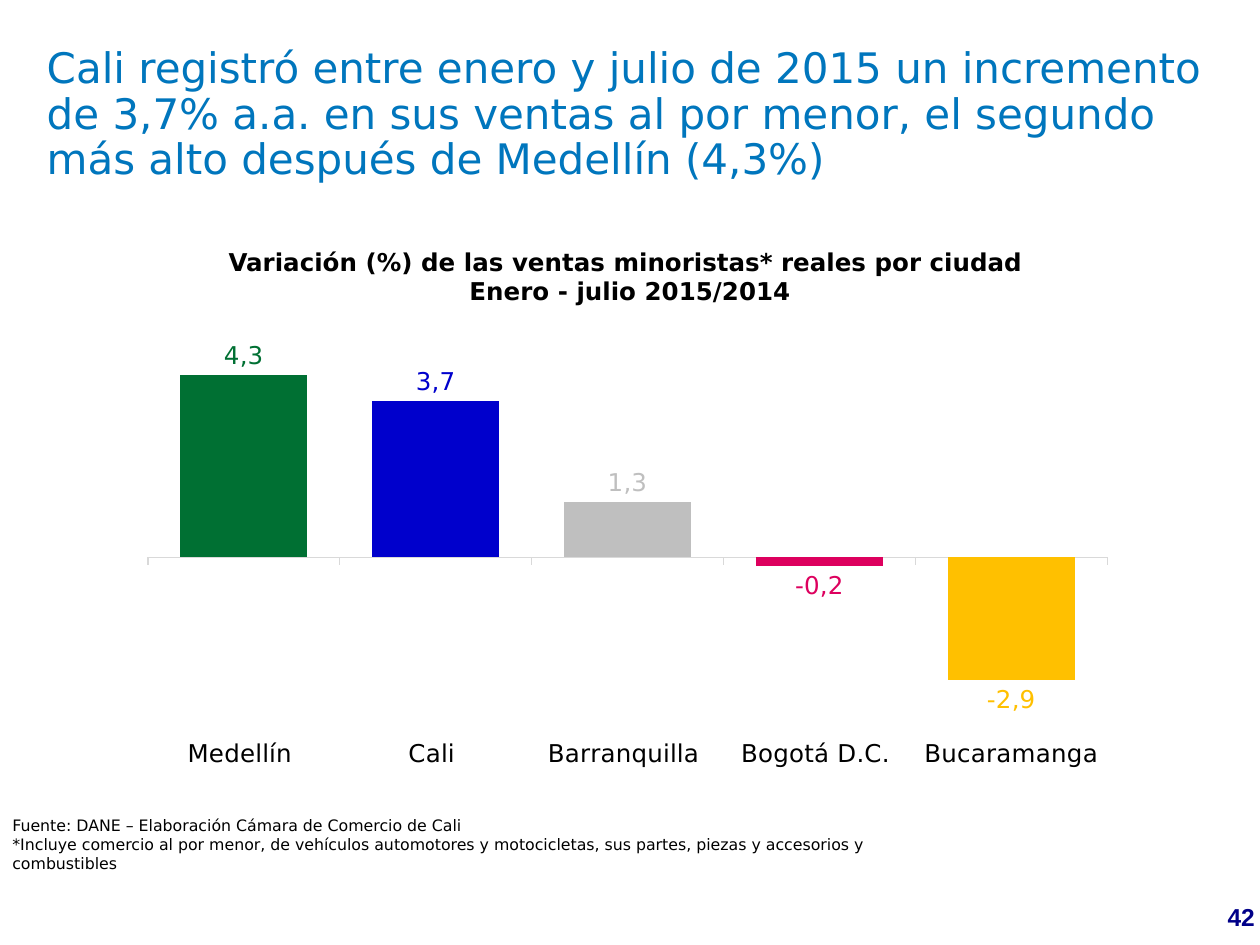
import pptx
import pptx.util
import pptx.oxml
import pptx.chart.data
import pptx.dml.color
import pptx.enum.chart
import pptx.enum.text

Pt = pptx.util.Pt
Align = pptx.enum.text.PP_ALIGN
Anchor = pptx.enum.text.MSO_ANCHOR
Chart = pptx.enum.chart

TITLE = ("Cali registró entre enero y julio de 2015 un incremento de 3,7% a.a. "
         "en sus ventas al por menor, el segundo más alto después de Medellín (4,3%)")
HEAD = ["Variación (%) de las ventas minoristas* reales por ciudad ",
        "Enero - julio 2015/2014"]
NOTES = ["Fuente: DANE – Elaboración Cámara de Comercio de Cali",
         "*Incluye comercio al por menor, de vehículos automotores y motocicletas, "
         "sus partes, piezas y accesorios y combustibles"]
PAGE = "42"
SERIES = "Series 1"
CITIES = [  # name, change in %, colour
    ("Medellín ", 4.3, "007033"),
    ("Cali ", 3.7, "0000CC"),
    ("Barranquilla ", 1.3, "BFBFBF"),
    ("Bogotá D.C. ", -0.2, "DD005E"),
    ("Bucaramanga", -2.9, "FFC000"),
]
THEME = {
    "font": "DejaVu Sans", "num_font": "Arial", "base_font": "Calibri",
    "title": "0076BD", "text": "000000", "page": "000089", "axis": "D9D9D9",
    "title_size": 24, "base_size": 18, "size": 14, "note_size": 9,
}
BOXES = {  # left, top, width, height
    "title": (19.5, 26.5, 686, 79),
    "head": (94.5, 137.5, 531, 41),
    "chart": (76.5, 174.5, 570.5, 273),
    "notes": (0, 462.5, 560, 40),
    "page": (687, 512, 44.5, 24.5),
}
PLOT = {"x": 0.014, "y": 0.084, "w": 0.961, "h": 0.798}


def place(key):
    return [Pt(n) for n in BOXES[key]]


def rgb(code):
    return pptx.dml.color.RGBColor.from_string(code)


def style(font, size=THEME["size"], color=THEME["text"], face=THEME["font"],
          bold=False):
    font.size, font.name, font.bold = Pt(size), face, bold
    font.color.rgb = rgb(color)


def write(frame, lines, align=Align.LEFT, anchor=Anchor.TOP, space=None, **look):
    frame.word_wrap = True
    frame.auto_size = pptx.enum.text.MSO_AUTO_SIZE.NONE
    frame.vertical_anchor = anchor
    for i, line in enumerate(lines):
        para = frame.add_paragraph() if i else frame.paragraphs[0]
        para.alignment = align
        para.line_spacing = space
        run = para.add_run()
        run.text = line
        style(run.font, **look)


def fix_plot(chart):
    """Set the inner plot area to the fractions in PLOT."""
    area = chart._chartSpace.chart.plotArea
    for old in area.xpath("c:layout"):
        area.remove(old)
    modes = "".join(f'<c:{k}Mode val="edge"/>' for k in "xy")
    sizes = "".join(f'<c:{k} val="{v}"/>' for k, v in PLOT.items())
    area.insert(0, pptx.oxml.parse_xml(
        '<c:layout xmlns:c="http://schemas.openxmlformats.org/drawingml/2006/chart">'
        f'<c:manualLayout><c:layoutTarget val="inner"/>{modes}{sizes}'
        '</c:manualLayout></c:layout>'))


def add_bars(slide):
    data = pptx.chart.data.CategoryChartData(number_format="#,##0.0")
    data.categories = [name for name, _, _ in CITIES]
    data.add_series(SERIES, [value for _, value, _ in CITIES])
    chart = slide.shapes.add_chart(
        Chart.XL_CHART_TYPE.COLUMN_CLUSTERED, *place("chart"), data).chart
    chart.has_legend = chart.has_title = False
    style(chart.font, size=THEME["base_size"], face=THEME["base_font"])
    fix_plot(chart)

    cat = chart.category_axis
    cat.tick_label_position = Chart.XL_TICK_LABEL_POSITION.LOW
    cat.major_tick_mark = Chart.XL_TICK_MARK.OUTSIDE
    cat.format.line.color.rgb = rgb(THEME["axis"])
    cat.format.line.width = Pt(0.75)
    style(cat.tick_labels.font)
    val = chart.value_axis
    val.minimum_scale, val.maximum_scale = -4, 5
    val.has_major_gridlines = val.visible = False
    val.tick_labels.number_format = "#,##0.0"
    val.tick_labels.number_format_is_linked = False

    plot = chart.plots[0]
    plot.gap_width = 51
    plot.vary_by_categories = False
    bars = plot.series[0]
    bars.invert_if_negative = False
    labels = bars.data_labels
    labels.show_value = True
    labels.number_format = "#,##0.0"
    labels.number_format_is_linked = False
    style(labels.font)
    for i, (_, value, color) in enumerate(CITIES):
        point = bars.points[i]
        point.format.fill.solid()
        point.format.fill.fore_color.rgb = rgb(color)
        label = point.data_label
        run = label.text_frame.paragraphs[0].add_run()
        run.text = f"{value:.1f}".replace(".", ",")
        style(run.font, color=color)
        label.position = Chart.XL_LABEL_POSITION.OUTSIDE_END


def main():
    deck = pptx.Presentation()
    deck.slide_width, deck.slide_height = Pt(720), Pt(540)
    slide = deck.slides.add_slide(deck.slide_layouts[5])

    def box(key, lines, **look):
        write(slide.shapes.add_textbox(*place(key)).text_frame, lines, **look)

    title = slide.shapes.title
    title.left, title.top, title.width, title.height = place("title")
    write(title.text_frame, [TITLE], anchor=Anchor.MIDDLE, space=0.9,
          size=THEME["title_size"], color=THEME["title"])
    add_bars(slide)
    box("head", HEAD, align=Align.CENTER, bold=True)
    box("notes", NOTES, size=THEME["note_size"])
    box("page", [PAGE], align=Align.CENTER, bold=True,
        color=THEME["page"], face=THEME["num_font"])
    deck.save("out.pptx")


if __name__ == "__main__":
    main()
